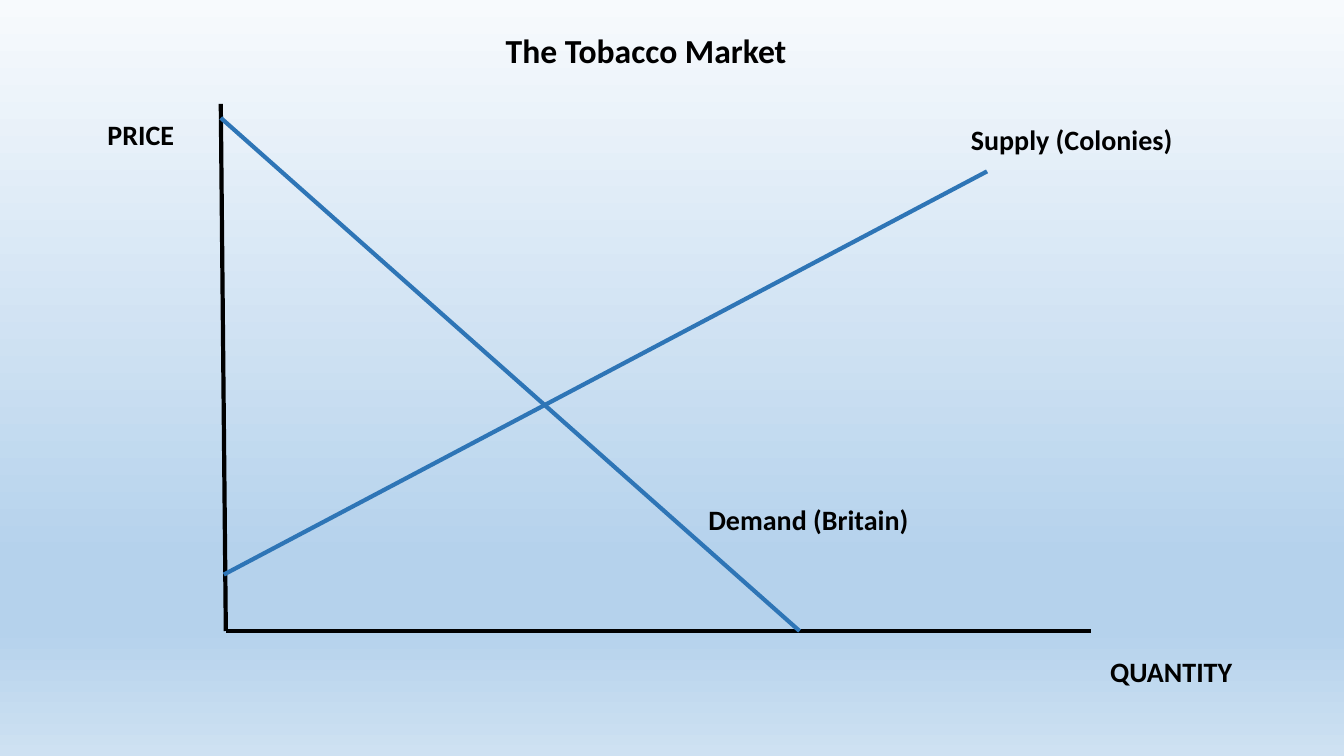
from lxml import etree
from pptx import Presentation
from pptx.dml.color import RGBColor
from pptx.enum.shapes import MSO_CONNECTOR
from pptx.enum.text import MSO_ANCHOR, MSO_AUTO_SIZE, PP_ALIGN
from pptx.oxml.ns import qn
from pptx.util import Emu, Pt

PX = 9144
STRAIGHT = MSO_CONNECTOR.STRAIGHT
CENTER = PP_ALIGN.CENTER
TOP = MSO_ANCHOR.TOP
GROW = MSO_AUTO_SIZE.SHAPE_TO_FIT_TEXT

BLACK = RGBColor(0x00, 0x00, 0x00)
CURVE_BLUE = RGBColor(0x2E, 0x75, 0xB6)
SKY_STOPS = [
    (0, RGBColor(0xF7, 0xFA, 0xFD)),
    (74, RGBColor(0xB5, 0xD2, 0xEC)),
    (83, RGBColor(0xB5, 0xD2, 0xEC)),
    (100, RGBColor(0xCE, 0xE1, 0xF2)),
]

TITLE = ("The Tobacco Market ", (207, 25, 875, 50))
LABELS = [
    ("Demand (Britain) ", (653, 494, 304, 44)),
    ("Supply (Colonies)", (940, 117, 246, 44)),
    (" PRICE", (-5, 112, 283, 44)),
    (" QUANTITY", (1017, 644, 283, 44)),
]

ORIGIN = (224, 626)
AXES = [((219, 103), ORIGIN), (ORIGIN, (1082, 626))]
CURVES = [((222, 570), (979, 170)), ((219, 117), (793, 626))]


def px(length):
    return Emu(length * PX)


def paint_background(slide):
    fill = slide.background.fill
    fill.gradient()
    fill.gradient_angle = 270
    stops = next(slide.element.iter(qn("a:gsLst")))
    for stop in list(stops):
        stops.remove(stop)
    for percent, color in SKY_STOPS:
        stop = etree.SubElement(stops, qn("a:gs"), pos=str(percent * 1000))
        etree.SubElement(stop, qn("a:srgbClr"), val=str(color))


def draw_lines(slide, segments, color):
    for start, end in segments:
        segment = slide.shapes.add_connector(STRAIGHT, *map(px, start + end))
        segment.line.color.rgb = color
        segment.line.width = Pt(3)
        etree.SubElement(segment.element.spPr, qn("a:effectLst"))


def write(box, text, size=20, color=BLACK, bold=True):
    frame = box.text_frame
    frame.word_wrap = True
    frame.auto_size = GROW
    frame.vertical_anchor = TOP
    paragraph = frame.paragraphs[0]
    paragraph.alignment = CENTER
    paragraph.line_spacing = 1.0
    run = paragraph.add_run()
    run.text = text
    run.font.name = "Calibri"
    run.font.size = Pt(size)
    run.font.bold = bold
    run.font.color.rgb = color


def main():
    deck = Presentation()
    deck.slide_width, deck.slide_height = px(1333), px(750)
    slide = deck.slides.add_slide(deck.slide_layouts[5])
    paint_background(slide)
    draw_lines(slide, AXES, BLACK)
    draw_lines(slide, CURVES, CURVE_BLUE)

    heading, place = TITLE
    title = slide.shapes.title
    title.left, title.top, title.width, title.height = map(px, place)
    write(title, heading, size=24)

    for label, place in LABELS:
        write(slide.shapes.add_textbox(*map(px, place)), label)

    deck.save("out.pptx")


if __name__ == "__main__":
    main()
